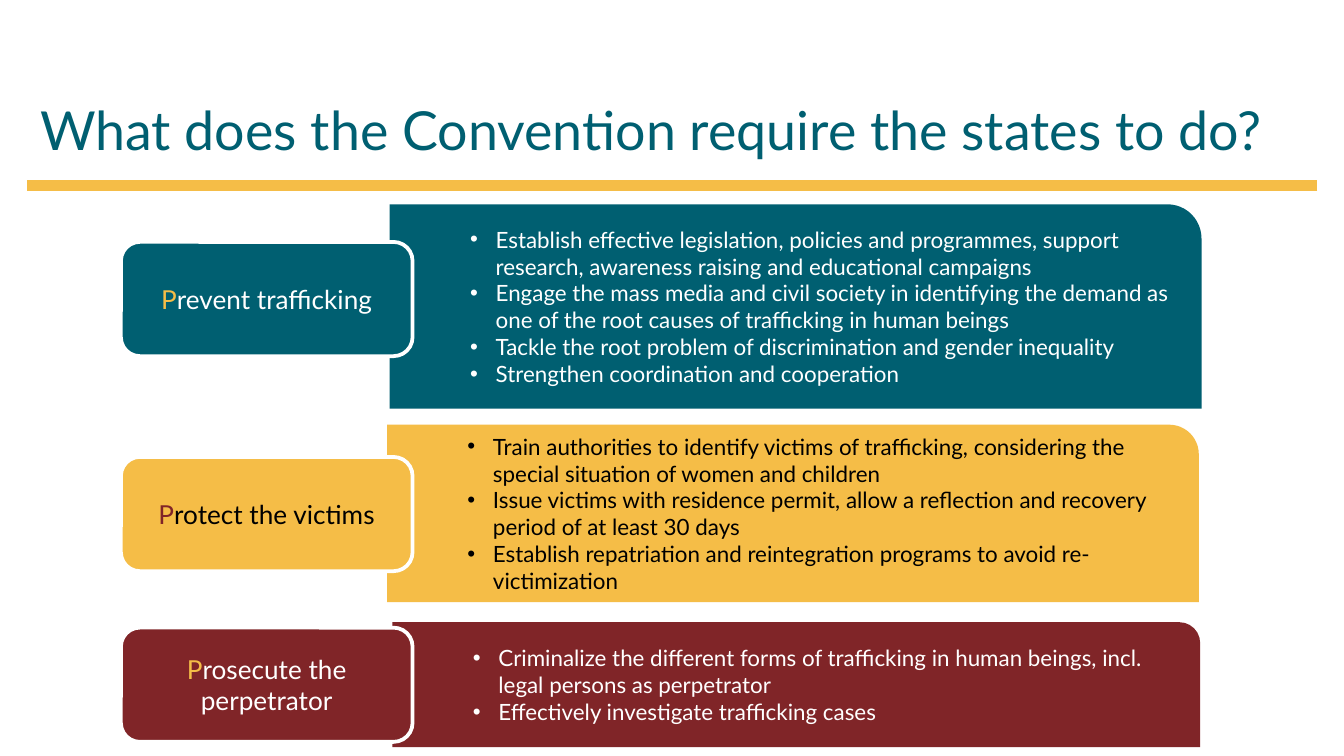
from dataclasses import dataclass

from lxml import etree
from pptx import Presentation
from pptx.dml.color import RGBColor
from pptx.enum.shapes import MSO_CONNECTOR, MSO_SHAPE
from pptx.enum.text import MSO_ANCHOR, PP_ALIGN
from pptx.oxml.ns import qn
from pptx.util import Inches, Pt

STRAIGHT = MSO_CONNECTOR.STRAIGHT
CARD_SHAPE = MSO_SHAPE.ROUND_1_RECTANGLE
LABEL_SHAPE = MSO_SHAPE.ROUNDED_RECTANGLE
MIDDLE, BOTTOM = MSO_ANCHOR.MIDDLE, MSO_ANCHOR.BOTTOM
LEFT, CENTER = PP_ALIGN.LEFT, PP_ALIGN.CENTER


@dataclass(frozen=True)
class Theme:
    font: str = "Lato"
    teal: str = "005F71"
    yellow: str = "F5BD47"
    red: str = "802528"
    white: str = "FFFFFF"
    black: str = "000000"
    title_size: float = 28.8
    label_size: float = 14
    body_size: float = 12
    rule_width: float = 6
    outline_width: float = 2


@dataclass(frozen=True)
class Duty:
    initial: str
    rest: str
    measures: tuple
    fill: str
    ink: str
    accent: str
    card_box: tuple
    label_top: float


THEME = Theme()
LABEL_LEFT, LABEL_WIDTH, LABEL_HEIGHT = 0.9, 2.17, 0.85
BULLET_INDENT, BULLET_HANG = 0.69, 0.19

DUTIES = (
    Duty("P", "revent trafficking", (
        "Establish effective legislation, policies and programmes, support "
        "research, awareness raising and educational campaigns",
        "Engage the mass media and civil society in identifying the demand as "
        "one of the root causes of trafficking in human beings",
        "Tackle the root problem of discrimination and gender inequality",
        "Strengthen coordination and cooperation",
    ), THEME.teal, THEME.white, THEME.yellow, (2.9, 1.52, 6.04, 1.52), 0.28),
    Duty("P", "rotect the victims", (
        "Train authorities to identify victims of trafficking, considering the "
        "special situation of women and children",
        "Issue victims with residence permit, allow a reflection and recovery "
        "period of at least 30 days",
        "Establish repatriation and reintegration programs to avoid "
        "re-victimization",
    ), THEME.yellow, THEME.black, THEME.red, (2.88, 3.16, 6.04, 1.32), 0.24),
    Duty("P", "rosecute the perpetrator", (
        "Criminalize the different forms of trafficking in human beings, incl. "
        "legal persons as perpetrator",
        "Effectively investigate trafficking cases",
    ), THEME.red, THEME.white, THEME.yellow, (2.92, 4.63, 6.01, 0.93), 0.04),
)


def add_bullet(paragraph):
    properties = paragraph._p.get_or_add_pPr()
    properties.set("marL", str(Inches(BULLET_INDENT)))
    properties.set("indent", str(-Inches(BULLET_HANG)))
    etree.SubElement(properties, qn("a:buFont")).set("typeface", "Arial")
    etree.SubElement(properties, qn("a:buChar")).set("char", "•")


def write_text(frame, paragraphs, *, size, align=LEFT, anchor=MIDDLE, bullets=False):
    frame.word_wrap = True
    frame.vertical_anchor = anchor
    for index, runs in enumerate(paragraphs):
        paragraph = frame.add_paragraph() if index else frame.paragraphs[0]
        paragraph.alignment = align
        if bullets:
            paragraph.level = 1
            add_bullet(paragraph)
        for words, color in runs:
            run = paragraph.add_run()
            run.text = words
            run.font.name = THEME.font
            run.font.size = Pt(size)
            run.font.color.rgb = RGBColor.from_string(color)


def add_panel(slide, kind, box, fill, outline=None):
    panel = slide.shapes.add_shape(kind, *map(Inches, box))
    panel.shadow.inherit = False
    panel.fill.solid()
    panel.fill.fore_color.rgb = RGBColor.from_string(fill)
    if outline:
        panel.line.color.rgb = RGBColor.from_string(outline)
        panel.line.width = Pt(THEME.outline_width)
    else:
        panel.line.fill.background()
    return panel.text_frame


def add_header(slide, left, top, width, height):
    heading = slide.shapes.add_textbox(*map(Inches, (left, top, width, height)))
    write_text(heading.text_frame,
               [[("What does the Convention require the states to do?", THEME.teal)]],
               size=THEME.title_size, anchor=BOTTOM)
    rule_y = top + height + 0.13
    rule = slide.shapes.add_connector(
        STRAIGHT, *map(Inches, (left + width, rule_y, left, rule_y)))
    rule.line.color.rgb = RGBColor.from_string(THEME.yellow)
    rule.line.width = Pt(THEME.rule_width)
    etree.SubElement(rule._element.spPr, qn("a:effectLst"))


def add_duty(slide, duty):
    card = add_panel(slide, CARD_SHAPE, duty.card_box, duty.fill)
    write_text(card, [[(measure, duty.ink)] for measure in duty.measures],
               size=THEME.body_size, bullets=True)
    label_box = (LABEL_LEFT, duty.card_box[1] + duty.label_top, LABEL_WIDTH, LABEL_HEIGHT)
    label = add_panel(slide, LABEL_SHAPE, label_box, duty.fill, THEME.white)
    write_text(label, [[(duty.initial, duty.accent), (duty.rest, duty.ink)]],
               size=THEME.label_size, align=CENTER)


def main():
    deck = Presentation()
    deck.slide_width = Inches(10)
    deck.slide_height = deck.slide_width * 9 // 16
    slide = deck.slides.add_slide(deck.slide_layouts[6])
    add_header(slide, 0.2, 0.31, 9.6, 0.94)
    for duty in DUTIES:
        add_duty(slide, duty)
    deck.save("out.pptx")


if __name__ == "__main__":
    main()
